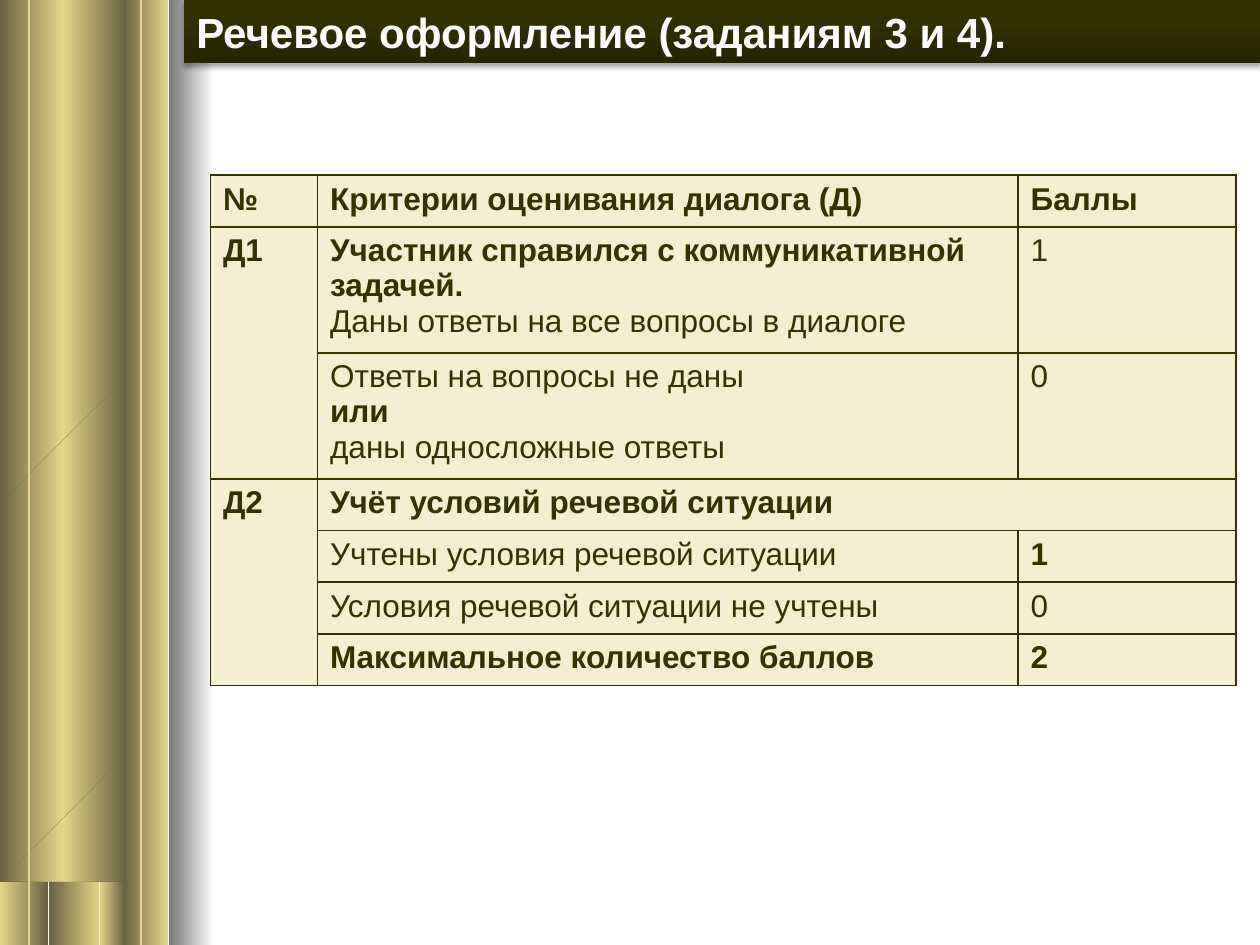
from lxml import etree
from pptx import Presentation, util as u
from pptx.dml.color import RGBColor
from pptx.enum import shapes, text
from pptx.oxml.ns import qn

# Content
TITLE = "Речевое оформление (заданиям 3 и 4)."
# Each cell is a list of (paragraph, bold); None is covered by a merged cell
CRITERIA = [
    [[("№", True)], [("Критерии оценивания диалога (Д)", True)], [("Баллы", True)]],
    [[("Д1", True)],
     [("Участник справился с коммуникативной задачей.", True),
      ("Даны ответы на все вопросы в диалоге", False)],
     [("1", False)]],
    [None,
     [("Ответы на вопросы не даны", False), ("или", True),
      ("даны односложные ответы", False)],
     [("0", False)]],
    [[("Д2", True)], [("Учёт условий речевой ситуации", True)], None],
    [None, [("Учтены условия речевой ситуации", False)], [("1", True)]],
    [None, [("Условия речевой ситуации не учтены", False)], [("0", False)]],
    [None, [("Максимальное количество баллов", True)], [("2", True)]],
]
MERGES = [((1, 0), (2, 0)), ((3, 0), (6, 0)), ((3, 1), (3, 2))]
COLUMN_WIDTHS = [0.85, 5.56, 1.73]
LINE_HEIGHTS = [0.41, 1, 1, 0.41, 0.41, 0.41, 0.41]

THEME = dict(font="Arial", title_size=24, table_size=18, gold="E5D58A",
             white="FFFFFF", ink="333300", cell="F5EED0",
             bar=[(0, "262600"), (80, "313100"), (100, "323200")], shade=46275)

# Gradient stops: (position, colour, shaded or not)
GOLD, DARK = (THEME["gold"], False), (THEME["gold"], True)
FADE_OUT = [(0, *GOLD), (100, *DARK)]
FADE_IN = [(0, *DARK), (100, *GOLD)]
SHEEN = [(0, *DARK), (50, *GOLD), (100, *DARK)]
SOFT_EDGE = [(0, THEME["white"], True), (100, THEME["white"], False)]

# Column: flat bars (left, width, gradient) and the twisted strands
BARS = [(0.79, 0.2, FADE_OUT), (0, 0.38, FADE_OUT),
        (0.39, 0.4, FADE_IN), (0.98, 0.35, FADE_IN)]
STRAND = [(0.98, 0.09), (0.98, 0.33), (0.97, 0.32), (0.93, 0.32), (0.91, 0.33),
          (0.88, 0.36), (0.81, 0.45), (0.64, 0.63), (0.47, 0.82), (0.44, 0.87),
          (0.41, 0.93), (0.4, 1.01), (0.39, 1.12), (0.39, 0.63), (0.39, 0.68),
          (0.4, 0.7), (0.42, 0.71), (0.44, 0.71), (0.46, 0.71), (0.49, 0.7),
          (0.83, 0.33), (0.9, 0.24), (0.93, 0.19), (0.95, 0.14), (0.97, 0.07),
          (0.98, 0), (0.98, 0.2)]
# Each half: top, height of bars, tops of its strands
HALVES = [(3.73, 3.77, [4.58, 5.05, 5.49, 5.94, 6.38, 6.83, 4.11, 3.61]),
          (-0.01, 3.77, [0.86, 1.31, 1.75, 2.2, 2.64, 7.25, 0.37, -0.12, -0.62, 3.12])]
BOTTOM = 7.51


def rgb(value):
    return RGBColor.from_string(value)


def add(parent, tag, **attributes):
    return etree.SubElement(parent, qn(tag), {k: str(v) for k, v in attributes.items()})


def style(shape, stops, angle=0):
    """Gradient fill, no outline, no shadow."""
    shape.shadow.inherit = False
    shape.line.fill.background()
    shape.fill.background()
    gradient = etree.Element(qn("a:gradFill"), rotWithShape="1")
    stop_list = add(gradient, "a:gsLst")
    for position, colour, shaded in stops:
        stop = add(stop_list, "a:gs", pos=position * 1000)
        tone = add(stop, "a:srgbClr", val=colour)
        if shaded:
            add(tone, "a:gamma")
            add(tone, "a:shade", val=THEME["shade"])
            add(tone, "a:invGamma")
    add(gradient, "a:lin", ang=angle * 60000, scaled=0)
    properties = shape._element.spPr
    properties.replace(properties.find(qn("a:noFill")), gradient)


def add_bar(slide, left, top, width, height, stops, angle=0):
    bar = slide.shapes.add_shape(shapes.MSO_SHAPE.RECTANGLE,
                                 *map(u.Inches, (left, top, width, height)))
    style(bar, stops, angle)
    return bar


def clip(points, limit, side):
    """Keep the part below (side 1) or above (side -1) a level."""
    kept = []
    for (x0, y0), (x1, y1) in zip(points[-1:] + points[:-1], points):
        inside0, inside1 = (side * (y - limit) >= 0 for y in (y0, y1))
        if inside0 != inside1:
            kept.append((x0 + (x1 - x0) * (limit - y0) / (y1 - y0), limit))
        if inside1:
            kept.append((x1, y1))
    return kept


def add_strand(slide, top, upper_limit):
    points = [(x, top + y) for x, y in STRAND]
    points = clip(clip(points, upper_limit, 1), BOTTOM, -1)
    builder = slide.shapes.build_freeform(*points[0], scale=u.Inches(1))
    builder.add_line_segments(points[1:], close=True)
    style(builder.convert_to_shape(), SHEEN)


def add_groove(slide, x):
    groove = slide.shapes.add_connector(shapes.MSO_CONNECTOR.STRAIGHT,
                                        *map(u.Inches, (x, 0, x, 7.5)))
    groove.line.color.rgb = rgb(THEME["gold"])
    groove.line.width = u.Pt(1)
    add(groove._element.spPr, "a:effectLst")


def write(paragraph, words, size, colour, bold):
    paragraph.alignment = text.PP_ALIGN.LEFT
    run = paragraph.add_run()
    run.text = words
    run.font.name, run.font.size = THEME["font"], u.Pt(size)
    run.font.bold, run.font.color.rgb = bold, rgb(colour)


def add_title(slide):
    stops = [(position, colour, False) for position, colour in THEME["bar"]]
    title = add_bar(slide, 1.46, 0, 8.54, 0.5, stops, 270)
    effects = title._element.spPr.find(qn("a:effectLst"))
    shadow = add(effects, "a:outerShdw", blurRad=u.Pt(3.1), dist=u.Pt(1.8),
                 dir=90 * 60000, rotWithShape=0)
    add(add(shadow, "a:srgbClr", val="000000"), "a:alpha", val=35000)
    frame = title.text_frame
    frame.word_wrap = True
    frame.auto_size = text.MSO_AUTO_SIZE.SHAPE_TO_FIT_TEXT
    frame.vertical_anchor = text.MSO_ANCHOR.TOP
    write(frame.paragraphs[0], TITLE, THEME["title_size"], THEME["white"], True)


def add_criteria(slide):
    table = slide.shapes.add_table(
        len(CRITERIA), len(COLUMN_WIDTHS), u.Inches(1.67), u.Inches(1.39),
        u.Inches(sum(COLUMN_WIDTHS)), u.Inches(sum(LINE_HEIGHTS))).table
    table.first_row = table.horz_banding = False
    for column, width in zip(table.columns, COLUMN_WIDTHS):
        column.width = u.Inches(width)
    for row, height in zip(table.rows, LINE_HEIGHTS):
        row.height = u.Inches(height)
    for r, line in enumerate(CRITERIA):
        for c, content in enumerate(line):
            cell = table.cell(r, c)
            borders = cell._tc.get_or_add_tcPr()
            for side in "LRTB":
                border = add(borders, "a:ln" + side, w=u.Pt(1))
                add(add(border, "a:solidFill"), "a:srgbClr", val=THEME["ink"])
            cell.fill.solid()
            cell.fill.fore_color.rgb = rgb(THEME["cell"])
            for i, (words, bold) in enumerate(content or []):
                frame = cell.text_frame
                paragraph = frame.add_paragraph() if i else frame.paragraphs[0]
                write(paragraph, words, THEME["table_size"], THEME["ink"], bold)
    for first, last in MERGES:
        table.cell(*first).merge(table.cell(*last))


def main():
    deck = Presentation()
    deck.slide_width, deck.slide_height = u.Inches(10), u.Inches(7.5)
    slide = deck.slides.add_slide(deck.slide_layouts[6])

    # Twisted column at the left
    for top, height, strands in HALVES:
        for left, width, stops in BARS:
            add_bar(slide, left, top, width, height, stops)
        for strand_top in strands:
            add_strand(slide, strand_top, top)
    add_bar(slide, 1.34, 0, 0.36, 7.5, SOFT_EDGE)
    for x in (0.23, 1.12):
        add_groove(slide, x)

    # Heading and scoring table
    add_title(slide)
    add_criteria(slide)
    deck.save("out.pptx")


if __name__ == "__main__":
    main()
